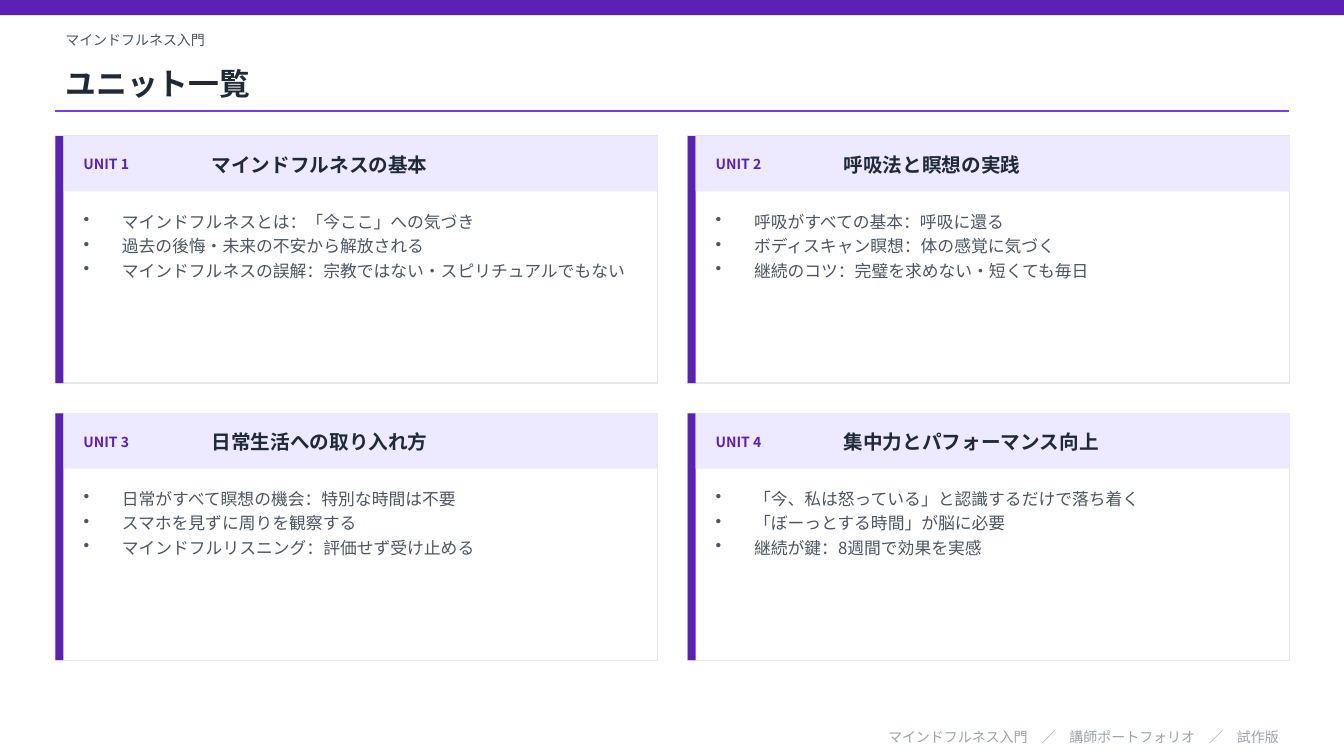
from lxml.etree import SubElement
from pptx import Presentation
from pptx.dml.color import RGBColor
from pptx.enum.shapes import MSO_CONNECTOR as CONN, MSO_SHAPE as SHAPE
from pptx.enum.text import MSO_ANCHOR as ANCHOR, MSO_AUTO_SIZE as AUTOSIZE, PP_ALIGN as ALIGN
from pptx.oxml.ns import qn
from pptx.util import Emu, Pt

PURPLE, VIOLET, LAVENDER = "5B21B6", "7C3AED", "EDE9FE"
INK, GREY, MUTED, BORDER, WHITE = "1F2937", "4B5563", "9CA3AF", "E5E7EB", "FFFFFF"

LEFT, WIDTH = 55, 1223
CARD_W, CARD_H, GAP = 597, 245, 30
BAR_W, HEAD_H = 8, 55

UNITS = [
    ("マインドフルネスの基本", [
        "マインドフルネスとは：「今ここ」への気づき",
        "過去の後悔・未来の不安から解放される",
        "マインドフルネスの誤解：宗教ではない・スピリチュアルでもない"]),
    ("呼吸法と瞑想の実践", [
        "呼吸がすべての基本：呼吸に還る",
        "ボディスキャン瞑想：体の感覚に気づく",
        "継続のコツ：完璧を求めない・短くても毎日"]),
    ("日常生活への取り入れ方", [
        "日常がすべて瞑想の機会：特別な時間は不要",
        "スマホを見ずに周りを観察する",
        "マインドフルリスニング：評価せず受け止める"]),
    ("集中力とパフォーマンス向上", [
        "「今、私は怒っている」と認識するだけで落ち着く",
        "「ぼーっとする時間」が脳に必要",
        "継続が鍵：8週間で効果を実感"]),
]


def px(n):
    return Emu(n * 9144)  # 100 px to the inch


def rgb(color):
    return RGBColor.from_string(color)


class Deck:
    font = "Noto Sans CJK JP"

    def __init__(self, slide):
        self.s = slide

    def rect(self, x, y, w, h, fill, line=None):
        sp = self.s.shapes.add_shape(SHAPE.RECTANGLE, px(x), px(y), px(w), px(h))
        sp.shadow.inherit = False
        sp.fill.solid()
        sp.fill.fore_color.rgb = rgb(fill)
        if line:
            sp.line.color.rgb = rgb(line)
            sp.line.width = Pt(1)
        else:
            sp.line.fill.background()

    def rule(self, x, y, w, color):
        c = self.s.shapes.add_connector(CONN.STRAIGHT, px(x), px(y), px(x + w), px(y))
        c.line.color.rgb = rgb(color)
        c.line.width = Pt(1)
        SubElement(c._element.spPr, qn("a:effectLst"))

    def style(self, p, size, color, bold=False):
        for r in p.runs:
            r.font.size = Pt(size)
            r.font.bold = bold
            r.font.color.rgb = rgb(color)
            r.font.name = self.font
            SubElement(r.font._element, qn("a:ea"), typeface=self.font)

    def text(self, x, y, w, h, text, size, color, bold=False, align=ALIGN.LEFT, sp=None):
        if sp is None:
            sp = self.s.shapes.add_textbox(0, 0, 0, 0)
        sp.left, sp.top, sp.width, sp.height = px(x), px(y), px(w), px(h)
        tf = sp.text_frame
        tf.text = text
        tf.word_wrap = True
        tf.auto_size = AUTOSIZE.NONE
        tf.vertical_anchor = ANCHOR.MIDDLE
        p = tf.paragraphs[0]
        p.alignment = align
        self.style(p, size, color, bold)

    def title(self, x, y, w, h, text, size, color):
        self.text(x, y, w, h, text, size, color, True, sp=self.s.shapes.title)

    def bullets(self, x, y, w, h, items, size, color):
        tf = self.s.shapes.add_textbox(px(x), px(y), px(w), px(h)).text_frame
        tf.word_wrap = True
        tf.text = "\n".join(items)
        for p in tf.paragraphs:
            p.space_after = Pt(3)
            pPr = p._p.get_or_add_pPr()
            pPr.set("marL", str(px(38)))
            pPr.set("indent", str(px(-38)))
            SubElement(pPr, qn("a:buChar"), char="•")
            self.style(p, size, color)

    def card(self, x, y, label, heading, items):
        inner = x + BAR_W
        self.rect(x, y, CARD_W, CARD_H, WHITE, BORDER)
        self.rect(x, y, BAR_W, CARD_H, PURPLE)
        self.rect(inner, y, CARD_W - BAR_W, HEAD_H, LAVENDER)
        self.text(inner + 10, y + 8, 120, 40, label, 10, PURPLE, True)
        self.text(x + 145, y + 8, 437, 40, heading, 14, INK, True)
        self.bullets(inner + 10, y + 70, 561, 160, items, 12, GREY)


def main():
    prs = Presentation()
    prs.slide_width, prs.slide_height = px(1333), px(750)
    deck = Deck(prs.slides.add_slide(prs.slide_layouts[5]))

    # Header
    deck.rect(0, 0, 1333, 15, PURPLE)
    deck.text(LEFT, 25, WIDTH, 30, "マインドフルネス入門", 10, GREY)
    deck.title(LEFT, 55, WIDTH, 55, "ユニット一覧", 22, INK)
    deck.rule(LEFT, 110, WIDTH, VIOLET)

    # Unit cards, two by two
    for i, (heading, items) in enumerate(UNITS):
        row, col = divmod(i, 2)
        deck.card(LEFT + col * (CARD_W + GAP), 135 + row * (CARD_H + GAP),
                  f"UNIT {i + 1}", heading, items)

    # Footer
    deck.text(LEFT, 720, WIDTH, 22, "マインドフルネス入門　／　講師ポートフォリオ　／　試作版",
              10, MUTED, align=ALIGN.RIGHT)

    prs.save("out.pptx")


if __name__ == "__main__":
    main()
